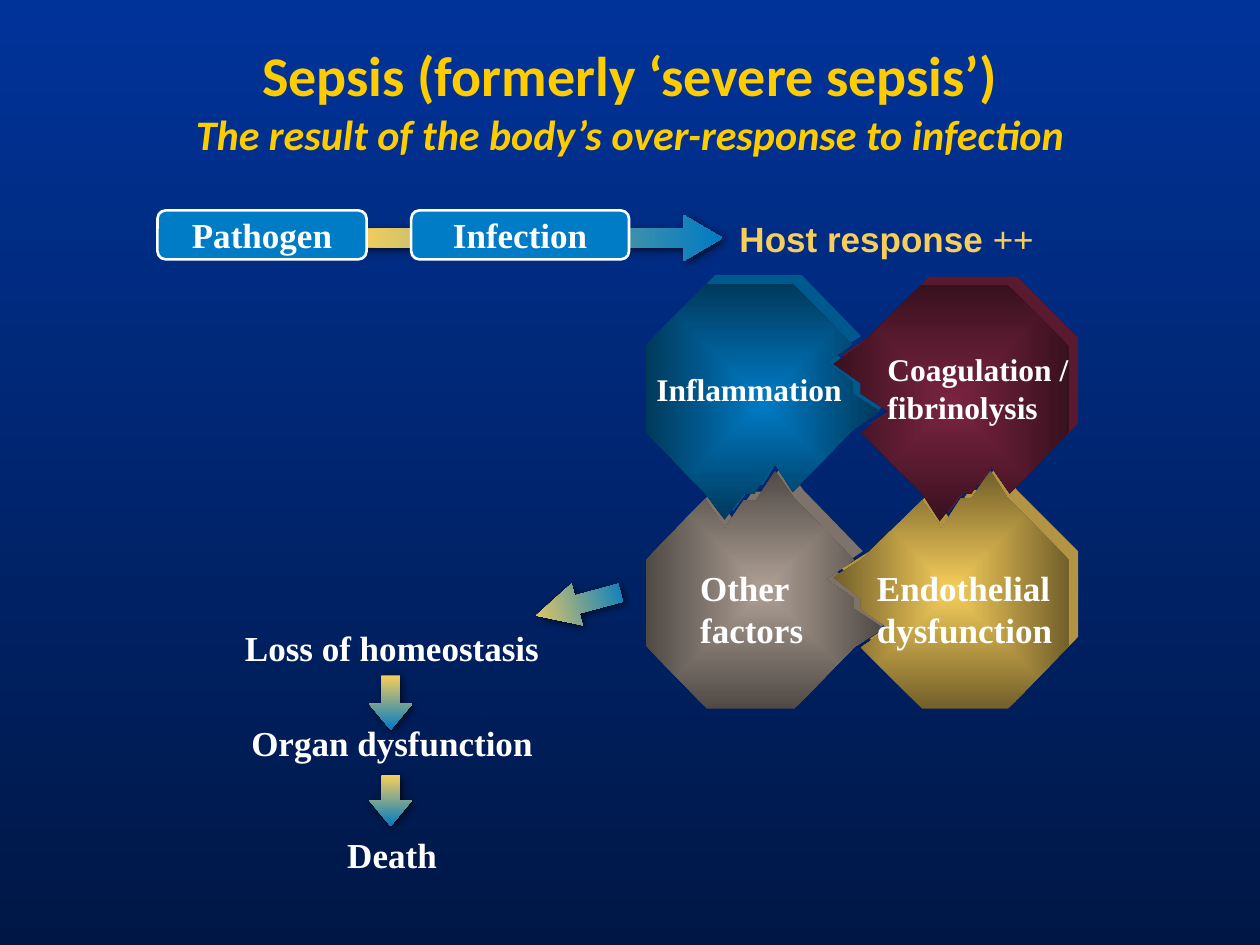
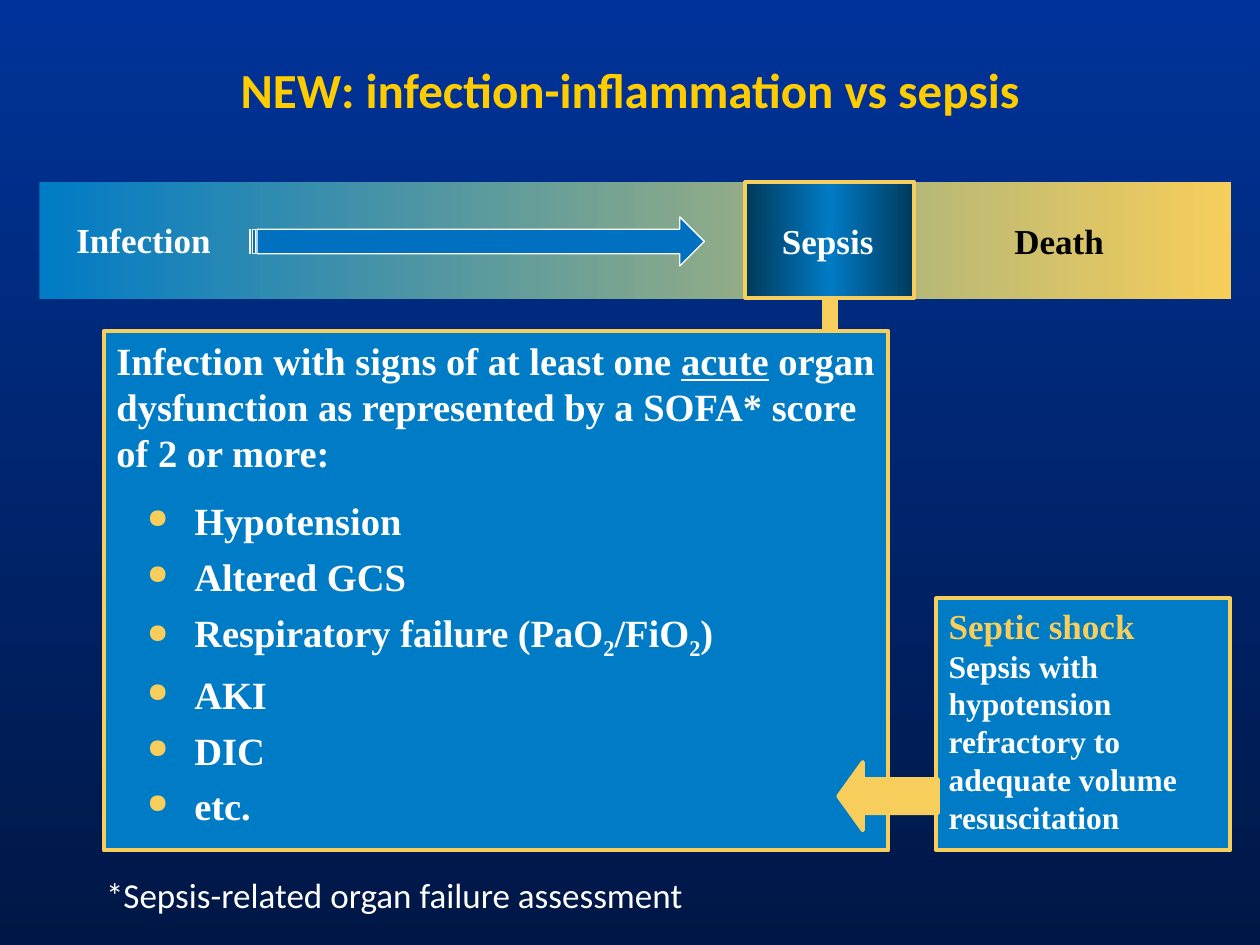
from copy import deepcopy
from dataclasses import dataclass

from lxml import etree
from pptx import Presentation
from pptx import util as u
from pptx.dml.color import RGBColor
from pptx.enum import shapes, text
from pptx.oxml.ns import qn

Pt = u.Pt
Kind = shapes.MSO_SHAPE
LEFT, CENTER = text.PP_ALIGN.LEFT, text.PP_ALIGN.CENTER
TOP, MIDDLE = text.MSO_ANCHOR.TOP, text.MSO_ANCHOR.MIDDLE


@dataclass(frozen=True)
class Theme:
    navy: str = "003399"
    title: str = "FFCC00"
    blue: str = "007BC5"
    arrow_blue: str = "0070C0"
    gold: str = "F7CE5B"
    wine: str = "7B2441"
    taupe: str = "AFA095"
    white: str = "FFFFFF"
    black: str = "000000"
    title_font: str = "Calibri"
    body_font: str = "Times New Roman"
    accent_font: str = "Arial"
    title_size: int = 32
    heading_size: int = 28
    subtitle_size: int = 24
    panel_size: int = 22
    body_size: int = 20
    small_size: int = 18
    frame_line: float = 2.25


def shade(color, factor):
    """Darken a hex colour."""
    return "".join(f"{round(int(color[i:i + 2], 16) * factor):02X}" for i in (0, 2, 4))


def add_xml(parent, tag, **attributes):
    return etree.SubElement(parent, qn(tag), {k: str(v) for k, v in attributes.items()})


def set_gradient(fill, owner, colors, angle=0, from_center=False):
    """Spread the colours evenly along a line, or outward from the centre."""
    fill.gradient()
    gradient = owner.find(".//" + qn("a:gradFill"))
    for child in list(gradient):
        gradient.remove(child)
    stops = add_xml(gradient, "a:gsLst")
    for i, color in enumerate(colors):
        stop = add_xml(stops, "a:gs", pos=round(100000 * i / (len(colors) - 1)))
        add_xml(stop, "a:srgbClr", val=color)
    if from_center:
        rect = add_xml(gradient, "a:path", path="rect")
        add_xml(rect, "a:fillToRect", l=50000, t=50000, r=50000, b=50000)
    else:
        add_xml(gradient, "a:lin", ang=angle * 60000, scaled=0)


class Deck:
    """Holds the style and the current slide; all lengths are points."""

    def __init__(self, theme):
        self.theme = theme
        self.prs = Presentation()
        self.prs.slide_width, self.prs.slide_height = Pt(720), Pt(540)
        master = self.prs.slide_master
        set_gradient(master.background.fill, master._element,
                     [theme.navy, shade(theme.navy, 0.46)], 90)
        self.slide = None

    def new_slide(self, title, box, size):
        self.slide = self.prs.slides.add_slide(self.prs.slide_layouts[5])
        heading = self.slide.shapes.title
        heading.left, heading.top, heading.width, heading.height = map(Pt, box)
        self.set_text(heading, title, CENTER, MIDDLE, size=size,
                      font=self.theme.title_font, color=self.theme.title)
        return heading

    # Text
    def style_run(self, run, size=None, color=None, font=None, bold=True):
        run.font.size = Pt(size or self.theme.body_size)
        run.font.name = font or self.theme.body_font
        run.font.bold = bold
        run.font.color.rgb = RGBColor.from_string(color or self.theme.white)

    def set_text(self, shape, words, align=LEFT, anchor=TOP, inset=(7.2, 3.6), wrap=True, **style):
        frame = shape.text_frame
        frame.text = words
        frame.word_wrap = wrap
        frame.auto_size = text.MSO_AUTO_SIZE.NONE
        frame.vertical_anchor = anchor
        frame.margin_left = frame.margin_right = Pt(inset[0])
        frame.margin_top = frame.margin_bottom = Pt(inset[1])
        for paragraph in frame.paragraphs:
            paragraph.alignment = align
            for run in paragraph.runs:
                self.style_run(run, **style)
            for line_break in paragraph._p.findall(qn("a:br")):
                line_break.append(deepcopy(paragraph.runs[0]._r.rPr))

    def extend(self, paragraph, words, **style):
        run = paragraph.add_run()
        run.text = words
        self.style_run(run, **style)
        return run

    def text(self, box, words, align=LEFT, **style):
        area = self.slide.shapes.add_textbox(*map(Pt, box))
        self.set_text(area, words, align, **style)
        return area

    def label(self, box, words, color=None):
        tag = self.text(box, words, CENTER, anchor=MIDDLE, inset=(0, 0), wrap=False, color=color)
        tag.text_frame.paragraphs[0].line_spacing = 0.95

    def bullets(self, box, items, gap, indent):
        area = self.text(box, "\n".join(items), size=self.theme.panel_size)
        for i, paragraph in enumerate(area.text_frame.paragraphs):
            if i:
                paragraph.space_before = Pt(gap)
            props = paragraph._p.get_or_add_pPr()
            props.set("marL", str(Pt(indent)))
            props.set("indent", str(-Pt(indent)))
            add_xml(add_xml(props, "a:buClr"), "a:srgbClr", val=self.theme.gold)
            add_xml(props, "a:buSzPct", val=70000)
            add_xml(props, "a:buChar", char="●")
        return area.text_frame.paragraphs

    # Shapes
    def paint(self, shape, colors, line=None, width=0, **gradient):
        shape.shadow.inherit = False
        if isinstance(colors, str):
            shape.fill.solid()
            shape.fill.fore_color.rgb = RGBColor.from_string(colors)
        else:
            set_gradient(shape.fill, shape._element.spPr, colors, **gradient)
        if line:
            shape.line.color.rgb = RGBColor.from_string(line)
            shape.line.width = Pt(width)
        else:
            shape.line.fill.background()

    def shape(self, kind, box, colors, line=None, width=0, adjust=(), **gradient):
        item = self.slide.shapes.add_shape(kind, *map(Pt, box))
        for i, value in enumerate(adjust):
            item.adjustments[i] = value
        self.paint(item, colors, line, width, **gradient)
        return item

    def flow_arrow(self, kind, box, colors, adjust, angle=0, rotation=0):
        arrow = self.shape(kind, box, colors, adjust=adjust, angle=angle)
        arrow.rotation = rotation
        effects = arrow._element.spPr.find(qn("a:effectLst"))
        shadow = add_xml(effects, "a:outerShdw", blurRad=Pt(5), dist=Pt(1.4),
                         dir=45 * 60000, algn="ctr", rotWithShape=0)
        add_xml(add_xml(shadow, "a:srgbClr", val=self.theme.black), "a:alpha", val=75000)

    def puzzle_piece(self, outline, color, depth=5):
        """A raised piece: its side, up and to the right, then its face."""
        for shift, colors in ((depth, shade(color, 0.72)), (0, [color, shade(color, 0.46)])):
            points = [(x + shift, y - shift) for x, y in outline]
            builder = self.slide.shapes.build_freeform(*points[0], scale=Pt(1))
            builder.add_line_segments(points[1:], close=True)
            self.paint(builder.convert_to_shape(), colors, from_center=True)


OTHER = [(369, 320), (369, 369), (404, 405), (454, 405), (488, 370), (505, 359),
         (488, 348), (488, 342), (472, 331), (488, 320), (454, 285), (443, 269),
         (432, 286), (425, 286), (414, 302), (403, 285)]
ENDOTHELIAL = [(527, 405), (576, 405), (611, 369), (611, 320), (576, 285), (566, 269),
               (555, 285), (549, 285), (538, 302), (527, 286), (492, 320), (476, 330),
               (492, 342), (492, 348), (508, 359), (492, 370)]
INFLAMMATION = [(453, 162), (404, 162), (369, 197), (369, 247), (403, 282), (414, 297),
                (425, 282), (431, 282), (442, 264), (453, 281), (487, 246), (503, 235),
                (487, 225), (487, 218), (472, 207), (487, 197)]
COAGULATION = [(611, 247), (611, 198), (576, 163), (526, 163), (492, 197), (476, 208),
               (492, 219), (492, 225), (509, 236), (492, 247), (527, 282), (537, 298),
               (549, 282), (555, 282), (566, 266), (577, 282)]


def build_over_response(deck):
    t = deck.theme
    heading = deck.new_slide(
        "Sepsis (formerly ‘severe sepsis’)\vThe result of the body’s over-response to infection",
        (54, 18, 612, 78), t.title_size)
    subtitle = heading.text_frame.paragraphs[0].runs[1]
    subtitle.font.size = Pt(t.subtitle_size)
    subtitle.font.italic = True

    # Decline towards death
    for top, stage in ((354.5, "Loss of homeostasis"), (408.5, "Organ dysfunction"), (472.5, "Death")):
        deck.text((110, top, 228, 31), stage, CENTER)
    for top, height in ((386, 31), (443, 29)):
        deck.flow_arrow(Kind.DOWN_ARROW, (211, top, 24.5, height), [t.gold, t.blue],
                        (0.43, 0.6), angle=90)

    # Pathogen to host response
    deck.flow_arrow(Kind.RIGHT_ARROW, (203, 123, 210, 26), [t.gold, t.blue], (0.41, 0.85))
    for left, width, cause in ((90, 119.5, "Pathogen"), (235, 124.5, "Infection")):
        box = deck.shape(Kind.ROUNDED_RECTANGLE, (left, 120.25, width, 28), t.blue,
                         t.white, 1.5, adjust=(0.17,))
        deck.set_text(box, cause, CENTER, MIDDLE, inset=(3.6, 0))
    response = deck.text((415.5, 120.5, 205, 31), "Host response ", font=t.accent_font, color=t.gold)
    deck.extend(response.text_frame.paragraphs[0], "++", font=t.accent_font,
                color=t.gold, bold=False)

    # Interlocking mechanisms
    deck.puzzle_piece(OTHER, t.taupe)
    deck.puzzle_piece(ENDOTHELIAL, t.gold)
    deck.flow_arrow(Kind.LEFT_ARROW, (305.5, 333, 50, 24.5), [t.gold, t.blue],
                    (0.43, 0.99), rotation=-15.1)
    deck.text((393, 320, 100, 55), "Other\vfactors")
    deck.text((494, 320, 126, 55), "Endothelial dysfunction")
    deck.puzzle_piece(INFLAMMATION, t.blue)
    deck.text((362, 208, 132, 29), "Inflammation", CENTER, size=t.small_size)
    deck.puzzle_piece(COAGULATION, t.wine)
    deck.text((500, 196.5, 122.5, 50), "Coagulation / fibrinolysis", size=t.small_size)


def build_definition(deck):
    t = deck.theme
    edge = shade(t.blue, 0.46)

    # Scale from infection to death
    deck.new_slide("NEW: infection-inflammation vs sepsis", (42, 30, 636, 42), t.heading_size)
    deck.shape(Kind.RECTANGLE, (22.5, 104, 681, 67), [t.blue, t.gold])
    deck.shape(Kind.RECTANGLE, (426, 104, 96.5, 66.5), [edge, t.blue, edge], t.gold, t.frame_line)
    deck.label((40, 126.5, 84, 23), "Infection")
    deck.label((446.5, 127, 53, 23), "Sepsis")
    deck.label((577.5, 126, 55.5, 25), "Death", t.black)

    # Definition of sepsis
    panel = deck.shape(Kind.RECTANGLE, (59.5, 189, 448, 297), t.blue, t.gold, t.frame_line)
    deck.set_text(panel, "Infection with signs of at least one ", size=t.panel_size)
    definition = panel.text_frame.paragraphs[0]
    deck.extend(definition, "acute", size=t.panel_size).font.underline = True
    deck.extend(definition, " organ dysfunction as represented by a SOFA* score of 2 or more:",
                size=t.panel_size)
    signs = deck.bullets((77, 280.5, 402, 200),
                         ["Hypotension", "Altered GCS", "Respiratory failure (PaO",
                          "AKI", "DIC", "etc."], gap=5.5, indent=27)
    for piece in ("2", "/FiO", "2", ")"):
        run = deck.extend(signs[2], piece, size=t.panel_size)
        if piece == "2":
            run.font._element.set("baseline", "-25000")
    deck.shape(Kind.RECTANGLE, (470, 171.5, 8.5, 16.5), t.gold, t.gold, 1)

    # Septic shock
    shock = deck.shape(Kind.RECTANGLE, (535, 342, 168, 144), t.blue, t.gold, t.frame_line)
    deck.set_text(shock, "Septic shock ", color=t.gold)
    deck.extend(shock.text_frame.paragraphs[0],
                "Sepsis with hypotension refractory to adequate volume resuscitation",
                size=t.small_size)
    deck.shape(Kind.LEFT_ARROW, (479, 435.5, 57, 39), t.gold, t.gold, t.frame_line,
               adjust=(0.5, 0.36))
    deck.shape(Kind.STRIPED_RIGHT_ARROW, (142.5, 124, 260, 28), t.arrow_blue, t.white, 0.75)

    # Footnote
    deck.text((53.5, 495.5, 461, 31.5), "*Sepsis-related organ failure assessment",
              font=t.title_font, bold=False)


def main():
    deck = Deck(Theme())
    build_over_response(deck)
    build_definition(deck)
    deck.prs.save("out.pptx")


if __name__ == "__main__":
    main()
